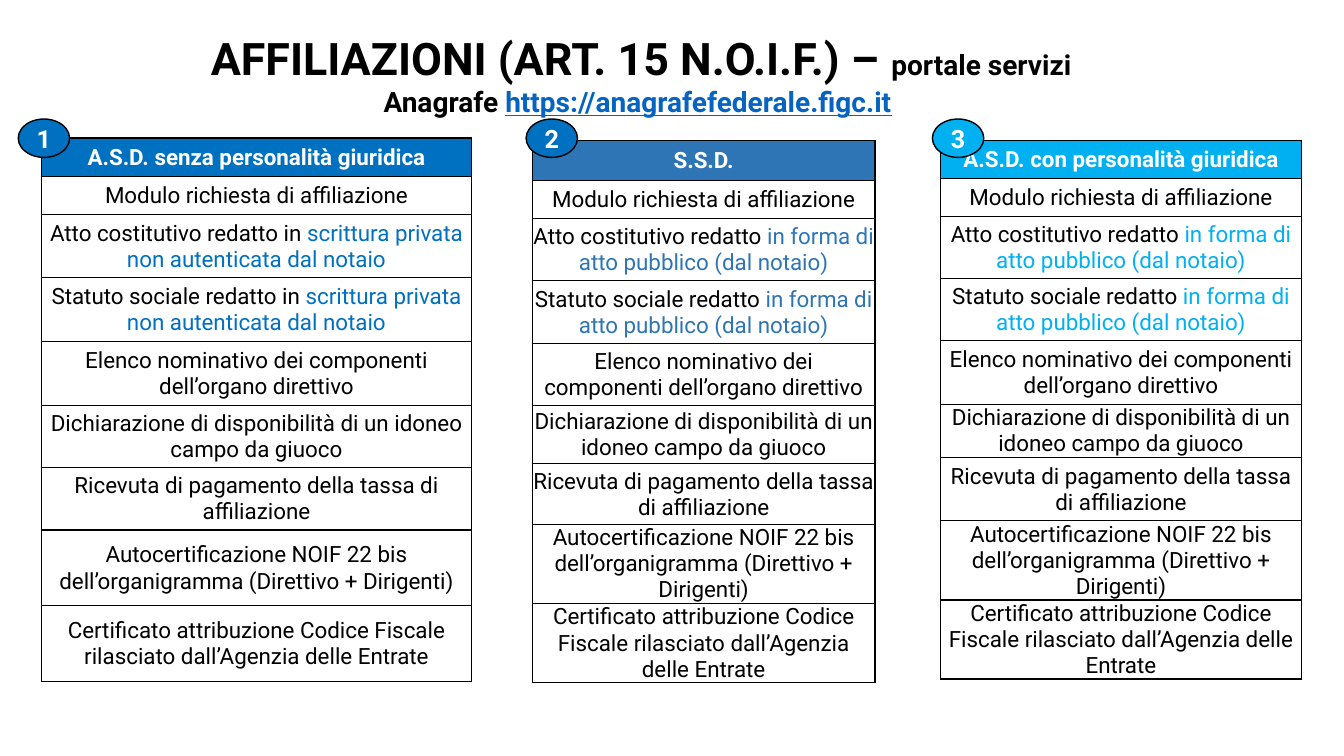
from lxml.etree import SubElement
from pptx import Presentation
from pptx.dml.color import RGBColor
from pptx.enum.shapes import MSO_SHAPE
from pptx.enum.text import MSO_ANCHOR, PP_ALIGN
from pptx.oxml import parse_xml
from pptx.oxml.ns import nsdecls
from pptx.util import Pt

BLACK = RGBColor(0x00, 0x00, 0x00)
WHITE = RGBColor(0xFF, 0xFF, 0xFF)
BLUE = RGBColor(0x00, 0x70, 0xC0)
STEEL = RGBColor(0x2E, 0x75, 0xB6)
SKY = RGBColor(0x00, 0xB0, 0xF0)
LINK = RGBColor(0x05, 0x63, 0xC1)

PRIVATE_DEED = ["in ", "scrittura privata non autenticata dal notaio"]
PUBLIC_DEED = ["", "in forma di atto pubblico (dal notaio)"]
COMMON_ROWS = [
    "Elenco nominativo dei componenti dell’organo direttivo",
    "Dichiarazione di disponibilità di un idoneo campo da giuoco",
    "Ricevuta di pagamento della tassa di affiliazione",
    "Autocertificazione NOIF 22 bis dell’organigramma (Direttivo + Dirigenti)",
    "Certificato attribuzione Codice Fiscale rilasciato dall’Agenzia delle Entrate",
]
COLUMNS = [
    ("A.S.D. senza personalità giuridica", PRIVATE_DEED, BLUE, BLUE, 29.5, 98.6, 307.4, 13,
     [27.4, 27.4, 44.6, 46.1, 45.4, 44.6, 44.6, 54, 54]),
    ("S.S.D.", PUBLIC_DEED, STEEL, BLUE, 380.2, 100.1, 244.8, 375.8,
     [28.8, 27.4, 43.9, 45.4, 43.9, 41.8, 43.2, 40.3, 54]),
    ("A.S.D. con personalità giuridica", PUBLIC_DEED, SKY, SKY, 671.8, 100.1, 257.8, 666,
     [27.4, 27.4, 43.9, 44.6, 45.4, 36, 45.4, 54, 54]),
]


def add_run(paragraph, text, size, color, bold=False):
    run = paragraph.add_run()
    run.text = text
    run.font.name = "Roboto"
    run.font.size = Pt(size)
    run.font.bold = bold
    run.font.color.rgb = color
    return run


def add_borders(cell):
    properties = cell._tc.get_or_add_tcPr()
    for side in ("lnL", "lnR", "lnT", "lnB"):
        border = parse_xml(f'<a:{side} {nsdecls("a")} w="12700"><a:solidFill/></a:{side}>')
        SubElement(border[0], border[0].tag.replace("solidFill", "srgbClr"), val=str(BLACK))
        properties.append(border)


presentation = Presentation()
presentation.slide_width = Pt(960)
presentation.slide_height = Pt(540)
slide = presentation.slides.add_slide(presentation.slide_layouts[5])

title = slide.shapes.title
title.left, title.top, title.width, title.height = Pt(103.7), Pt(18), Pt(708.5), Pt(70.6)
title.text_frame.word_wrap = True
title.text_frame.vertical_anchor = MSO_ANCHOR.MIDDLE
paragraph = title.text_frame.paragraphs[0]
paragraph.alignment = PP_ALIGN.CENTER
add_run(paragraph, "AFFILIAZIONI (ART. 15 N.O.I.F.) – ", 32, BLACK, True)
add_run(paragraph, "portale servizi Anagrafe ", 20, BLACK, True)
address = add_run(paragraph, "https://anagrafefederale.figc.it", 20, LINK, True)
address.font.underline = True
add_run(paragraph, " ", 20, BLACK, True)

for number, column in enumerate(COLUMNS, start=1):
    heading, deed, accent, badge_color, left, top, width, badge_left, heights = column
    linking_word, deed_form = deed
    rows = [
        [(heading, WHITE)],
        [("Modulo richiesta di affiliazione", BLACK)],
        [("Atto costitutivo redatto " + linking_word, BLACK), (deed_form, accent)],
        [("Statuto sociale redatto " + linking_word, BLACK), (deed_form, accent)],
    ] + [[(text, BLACK)] for text in COMMON_ROWS]

    table = slide.shapes.add_table(
        len(rows), 1, Pt(left), Pt(top), Pt(width), Pt(sum(heights))).table
    table.columns[0].width = Pt(width)
    for index, (parts, height) in enumerate(zip(rows, heights)):
        table.rows[index].height = Pt(height)
        cell = table.cell(index, 0)
        cell.margin_left = cell.margin_right = cell.margin_top = Pt(0.72)
        cell.margin_bottom = 0
        cell.vertical_anchor = MSO_ANCHOR.MIDDLE
        add_borders(cell)
        cell.fill.solid()
        cell.fill.fore_color.rgb = accent if index == 0 else WHITE
        paragraph = cell.text_frame.paragraphs[0]
        paragraph.alignment = PP_ALIGN.CENTER
        for text, color in parts:
            add_run(paragraph, text, 16, color, index == 0)

    badge = slide.shapes.add_shape(
        MSO_SHAPE.OVAL, Pt(badge_left), Pt(85), Pt(36.7), Pt(27.4))
    badge.shadow.inherit = False
    badge.fill.solid()
    badge.fill.fore_color.rgb = badge_color
    badge.line.color.rgb = BLACK
    badge.line.width = Pt(1)
    badge.text_frame.vertical_anchor = MSO_ANCHOR.MIDDLE
    paragraph = badge.text_frame.paragraphs[0]
    paragraph.alignment = PP_ALIGN.CENTER
    add_run(paragraph, str(number), 18, WHITE, True)

presentation.save("out.pptx")
